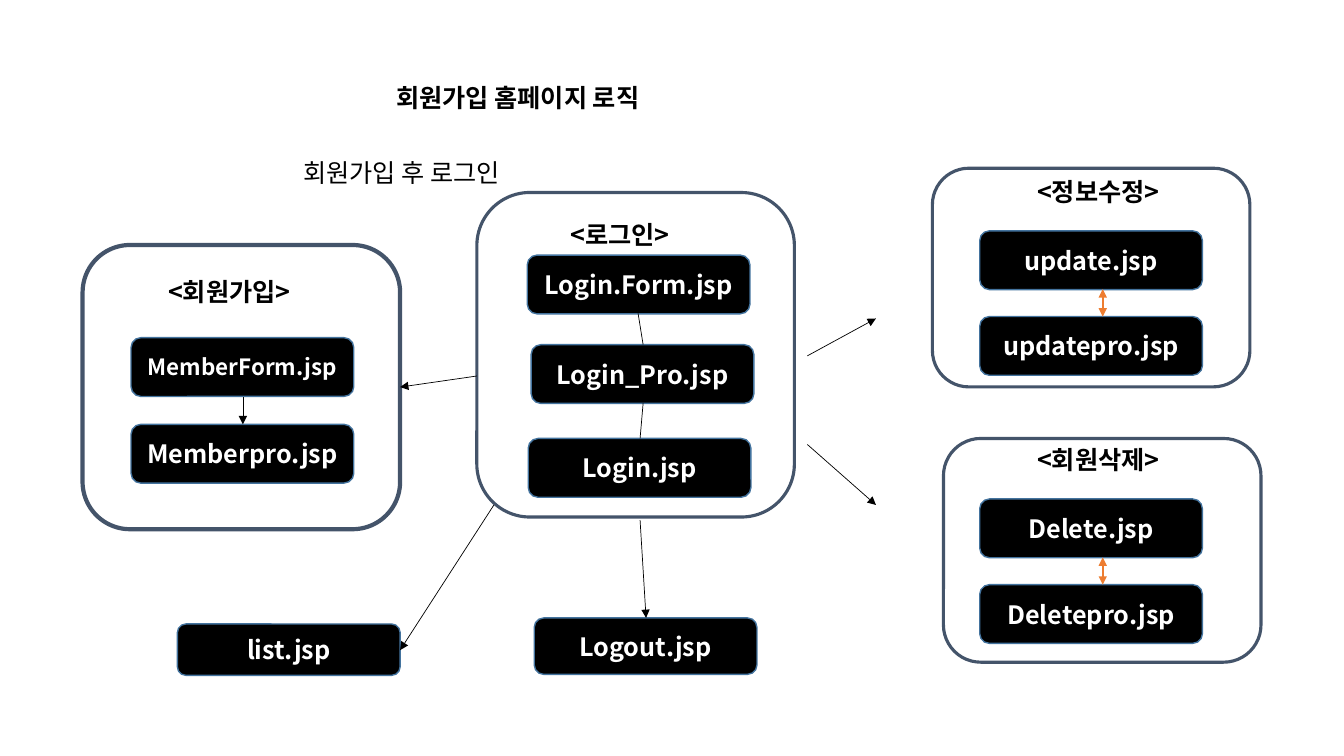
from lxml import etree
from pptx import Presentation
from pptx.dml.color import RGBColor
from pptx.enum.shapes import MSO_CONNECTOR, MSO_SHAPE
from pptx.enum.text import MSO_ANCHOR, PP_ALIGN
from pptx.oxml.ns import qn
from pptx.util import Pt

ROUND_RECT = MSO_SHAPE.ROUNDED_RECTANGLE
STRAIGHT = MSO_CONNECTOR.STRAIGHT
MIDDLE = MSO_ANCHOR.MIDDLE
CENTER, LEFT = PP_ALIGN.CENTER, PP_ALIGN.LEFT
FONT = "Noto Sans CJK KR"
BLACK, WHITE, ORANGE = "000000", "FFFFFF", "ED7D31"
FRAME_LINE, FILE_LINE = "44546A", "43739E"
BOX_W, FRAME_W = 159.1, 226.8


def color(target, value):
    target.rgb = RGBColor.from_string(value)


def write(sp, text, size, value, bold, align):
    tf = sp.text_frame
    tf.word_wrap = True
    tf.text = text
    p = tf.paragraphs[0]
    p.alignment = align
    r = p.runs[0]
    r.font.name, r.font.size, r.font.bold = FONT, Pt(size), bold
    color(r.font.color, value)
    etree.SubElement(r.font._element, qn("a:ea"), typeface=FONT)


prs = Presentation()
prs.slide_width, prs.slide_height = Pt(960), Pt(540)
s = prs.slides.add_slide(prs.slide_layouts[6])

# Group frames: left, top, height, line width
frames = [
    (59, 175, 203, 3),            # sign-up
    (340.6, 137.5, 231.8, 2.25),  # login
    (666, 120.2, 156.2, 2.25),    # update
    (673.9, 313.2, 159.8, 2.25),  # delete
]
for x, y, h, weight in frames:
    sp = s.shapes.add_shape(ROUND_RECT, Pt(x), Pt(y), Pt(FRAME_W), Pt(h))
    sp.shadow.inherit = False
    sp.fill.background()
    color(sp.line.color, FRAME_LINE)
    sp.line.width = Pt(weight)

# Page files: name, left, top, height, text size
files = [
    ("MemberForm.jsp", 93.6, 241.2, 42, 16),
    ("Memberpro.jsp", 93.6, 303.1, 42, 18),
    ("Login.Form.jsp", 376.6, 182.2, 42, 18),
    ("Login_Pro.jsp", 379.4, 246.2, 42, 18),
    ("Login.jsp", 377.3, 313.2, 42, 18),
    ("update.jsp", 699.8, 164.9, 42, 18),
    ("updatepro.jsp", 699.8, 226.1, 42, 18),
    ("Delete.jsp", 699.8, 356.4, 42, 18),
    ("Deletepro.jsp", 699.8, 417.6, 42, 18),
    ("list.jsp", 126.7, 445.7, 36.7, 18),
    ("Logout.jsp", 381.6, 441.4, 40.3, 18),
]
for name, x, y, h, size in files:
    sp = s.shapes.add_shape(ROUND_RECT, Pt(x), Pt(y), Pt(BOX_W), Pt(h))
    sp.shadow.inherit = False
    sp.fill.solid()
    color(sp.fill.fore_color, BLACK)
    color(sp.line.color, FILE_LINE)
    sp.line.width = Pt(1)
    sp.text_frame.vertical_anchor = MIDDLE
    write(sp, name, size, WHITE, True, CENTER)

# Title, note and group labels: text, left, top, width, bold
labels = [
    ("회원가입 홈페이지 로직", 275.8, 55.4, 594, True),
    ("회원가입 후 로그인", 209.5, 108.7, 291.6, False),
    ("<회원가입>", 113, 193.7, BOX_W, True),
    ("<로그인>", 400.3, 153.4, BOX_W, True),
    ("<정보수정>", 733.7, 122.4, BOX_W, True),
    ("<회원삭제>", 733.7, 313.9, BOX_W, True),
]
for text, x, y, w, bold in labels:
    sp = s.shapes.add_textbox(Pt(x), Pt(y), Pt(w), Pt(29))
    write(sp, text, 18, BLACK, bold, LEFT)

# Connections: from x, y, to x, y, colour, width, arrow ends
HEAD, TAIL = "a:headEnd", "a:tailEnd"
links = [
    (455.8, 223.9, 459.4, 246.2, BLACK, 0.5, []),
    (459.4, 288, 457.2, 313.2, BLACK, 0.5, []),
    (173.5, 283.7, 173.5, 303.1, BLACK, 0.5, [TAIL]),
    (340.6, 268.6, 285.8, 276.5, BLACK, 0.5, [TAIL]),
    (576.7, 254.2, 625.7, 227.5, BLACK, 0.5, [TAIL]),
    (576.7, 317.5, 625.7, 360.7, BLACK, 0.5, [TAIL]),
    (457.2, 371.5, 461.5, 441.4, BLACK, 0.5, [TAIL]),
    (352.8, 360.7, 285.8, 464.4, BLACK, 0.5, [TAIL]),
    (787.7, 206.6, 787.7, 226.1, ORANGE, 1.5, [HEAD, TAIL]),
    (787.7, 398.2, 787.7, 417.6, ORANGE, 1.5, [HEAD, TAIL]),
]
for x1, y1, x2, y2, value, weight, ends in links:
    sp = s.shapes.add_connector(STRAIGHT, Pt(x1), Pt(y1), Pt(x2), Pt(y2))
    color(sp.line.color, value)
    sp.line.width = Pt(weight)
    ln = sp.line._get_or_add_ln()
    for end in ends:
        etree.SubElement(ln, qn(end), type="triangle")
    etree.SubElement(sp._element.spPr, qn("a:effectLst"))

prs.save("out.pptx")
